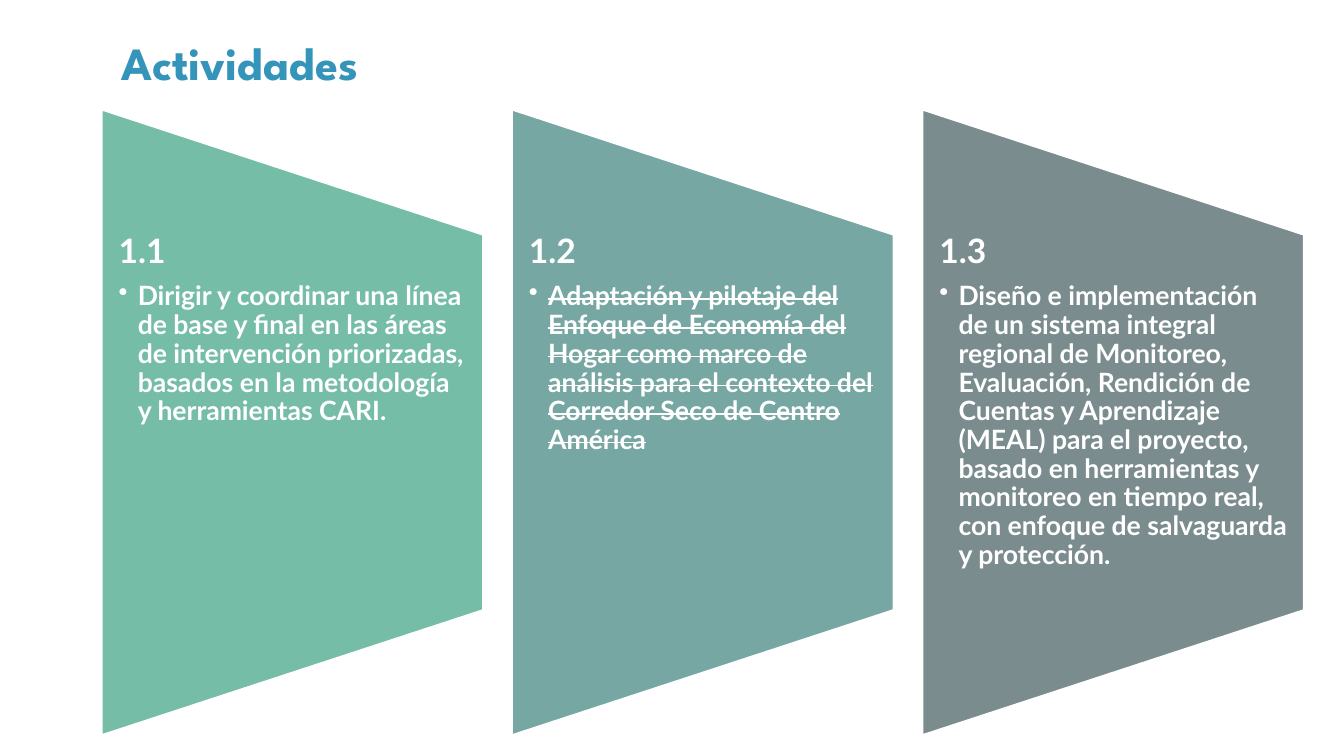
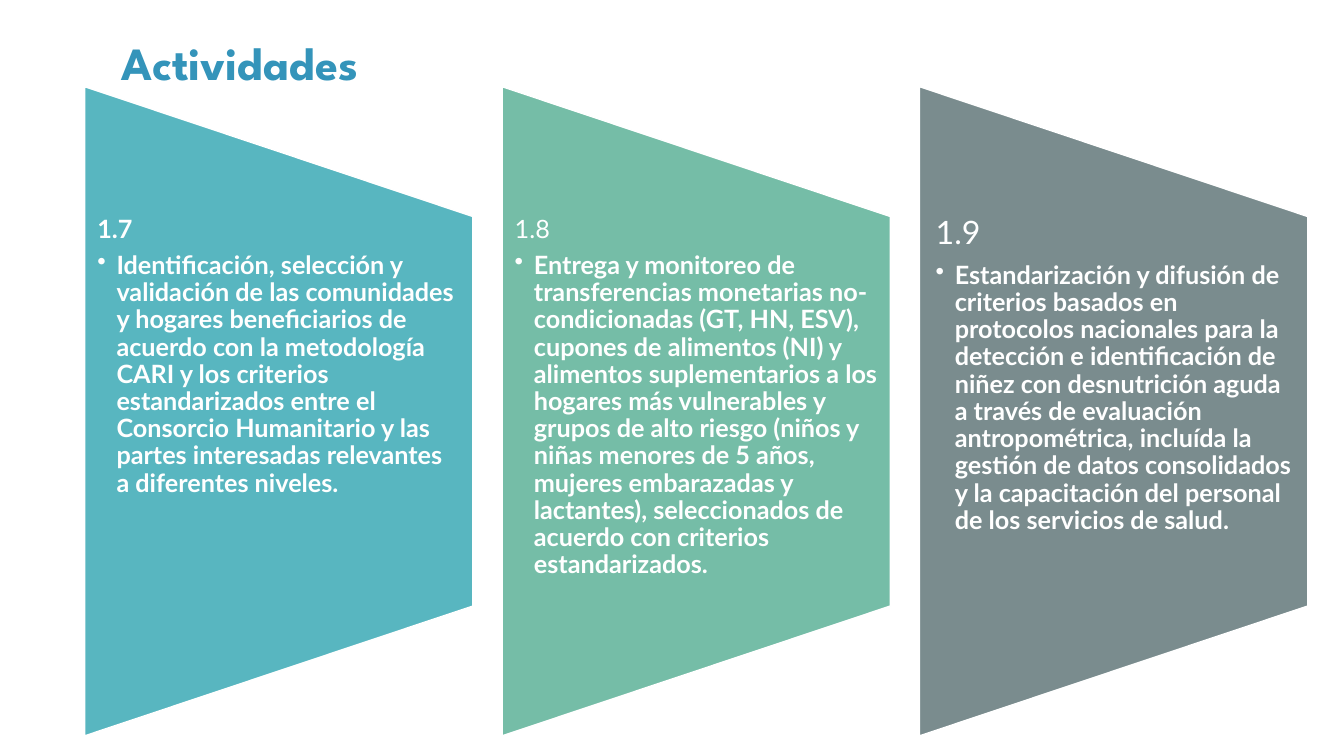
from dataclasses import dataclass

from lxml import etree
from pptx import Presentation
from pptx.dml.color import RGBColor
from pptx.enum.shapes import MSO_SHAPE
from pptx.enum.text import MSO_ANCHOR, PP_ALIGN
from pptx.oxml.ns import qn
from pptx.util import Inches, Pt

# Shared style
WHITE = RGBColor(0xFF, 0xFF, 0xFF)
BLUE = RGBColor(0x34, 0x94, 0xBA)
AQUA = RGBColor(0x58, 0xB6, 0xC0)
GREEN = RGBColor(0x75, 0xBD, 0xA7)
TEAL = RGBColor(0x76, 0xA7, 0xA2)
GRAY = RGBColor(0x7A, 0x8C, 0x8E)
HEAD_FONT = "League Spartan"
BODY_FONT = "Lato"
INDENT = Inches(0.19)


@dataclass
class Card:
    code: str
    body: str
    fill: RGBColor
    head: int = 24
    bold: bool = True
    strike: bool = False


@dataclass
class Page:
    left: float
    top: float
    width: float
    height: float
    step: float
    size: int
    cards: list[Card]


PAGES = [
    Page(1.01, 1.09, 3.78, 6.2, 4.07, 19, [
        Card("1.1", "Dirigir y coordinar una línea de base y final en las áreas de "
             "intervención priorizadas, basados en la metodología y herramientas CARI.",
             GREEN),
        Card("1.2", "Adaptación y pilotaje del Enfoque de Economía del Hogar como marco "
             "de análisis para el contexto del Corredor Seco de Centro América",
             TEAL, strike=True),
        Card("1.3", "Diseño e implementación de un sistema integral regional de Monitoreo, "
             "Evaluación, Rendición de Cuentas y Aprendizaje (MEAL) para el proyecto, "
             "basado en herramientas y monitoreo en tiempo real, con enfoque de "
             "salvaguarda y protección.", GRAY),
    ]),
    Page(0.84, 0.86, 3.85, 6.44, 4.14, 18, [
        Card("1.7", "Identificación, selección y validación de las comunidades y hogares "
             "beneficiarios de acuerdo con la metodología CARI y los criterios "
             "estandarizados entre el Consorcio Humanitario y las partes interesadas "
             "relevantes a diferentes niveles.", AQUA, head=18),
        Card("1.8", "Entrega y monitoreo de transferencias monetarias no-condicionadas "
             "(GT, HN, ESV), cupones de alimentos (NI) y alimentos suplementarios a los "
             "hogares más vulnerables y grupos de alto riesgo (niños y niñas menores de "
             "5 años, mujeres embarazadas y lactantes), seleccionados de acuerdo con "
             "criterios estandarizados.", GREEN, head=18, bold=False),
        Card("1.9", "Estandarización y difusión de criterios basados en protocolos "
             "nacionales para la detección e identificación de niñez con desnutrición "
             "aguda a través de evaluación antropométrica, incluída la gestión de datos "
             "consolidados y la capacitación del personal de los servicios de salud.",
             GRAY, head=23, bold=False),
    ]),
]


def write(para, text: str, *, size: int, font: str = BODY_FONT,
          color: RGBColor = WHITE, bold: bool = True, strike: bool = False,
          align=PP_ALIGN.LEFT, line: float = 0.9, after: float = 0,
          bullet: bool = False) -> None:
    """Fill a paragraph; after is a share of the font size."""
    para.alignment = align
    para.line_spacing = line
    para.space_after = Pt(round(size * after, 1))
    run = para.add_run()
    run.text = text
    run.font.name = font
    run.font.size = Pt(size)
    run.font.bold = bold
    run.font.color.rgb = color
    if strike:
        run.font._element.set("strike", "sngStrike")
    if bullet:
        para.level = 1
        props = para._p.get_or_add_pPr()
        props.set("marL", str(INDENT))
        props.set("indent", str(-INDENT))
        etree.SubElement(props, qn("a:buChar")).set("char", "•")


def add_title(slide, text: str) -> None:
    box = slide.shapes.add_shape(MSO_SHAPE.ROUNDED_RECTANGLE, Inches(0.72),
                                 Inches(0.21), Inches(3.32), Inches(0.81))
    box.shadow.inherit = False
    box.fill.background()
    box.line.fill.background()
    frame = box.text_frame
    frame.word_wrap = True
    frame.vertical_anchor = MSO_ANCHOR.MIDDLE
    write(frame.paragraphs[0], text, size=33, font=HEAD_FONT, color=BLUE,
          align=PP_ALIGN.CENTER, line=1.0)


def add_card(shapes, page: Page, card: Card, left: float) -> None:
    # Panel, turned a quarter about its centre
    wide, high = page.height, page.width
    shift = (wide - high) / 2
    panel = shapes.add_shape(MSO_SHAPE.FLOWCHART_MANUAL_OPERATION,
                             Inches(left - shift), Inches(page.top + shift),
                             Inches(wide), Inches(high))
    panel.rotation = 270
    panel.shadow.inherit = False
    panel.fill.solid()
    panel.fill.fore_color.rgb = card.fill
    panel.line.color.rgb = WHITE
    panel.line.width = Pt(1)

    # Text in the middle three fifths
    box = shapes.add_textbox(Inches(left), Inches(page.top + page.height / 5),
                             Inches(page.width), Inches(page.height * 3 / 5))
    frame = box.text_frame
    frame.word_wrap = True
    frame.margin_left = frame.margin_right = Inches(card.head / 144)
    frame.margin_top = frame.margin_bottom = 0
    write(frame.paragraphs[0], card.code, size=card.head, bold=card.bold, after=0.35)
    write(frame.add_paragraph(), card.body, size=page.size, strike=card.strike,
          after=0.15, bullet=True)


def main() -> None:
    deck = Presentation()
    deck.slide_width = Inches(13.33)
    deck.slide_height = Inches(7.5)
    for page in PAGES:
        slide = deck.slides.add_slide(deck.slide_layouts[6])
        add_title(slide, "Actividades")
        group = slide.shapes.add_group_shape()
        for col, card in enumerate(page.cards):
            add_card(group.shapes, page, card, page.left + col * page.step)
    deck.save("out.pptx")


if __name__ == "__main__":
    main()
